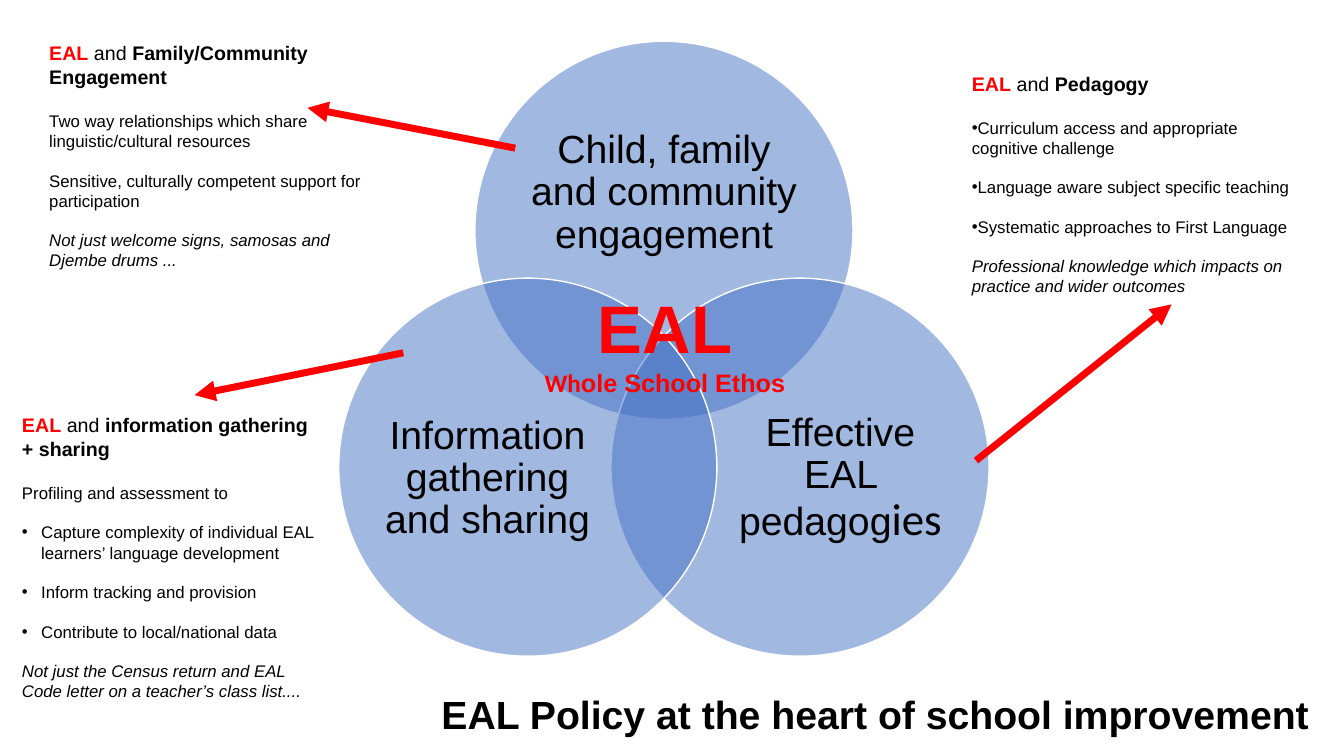
from lxml import etree
from pptx import Presentation
from pptx.dml.color import RGBColor
from pptx.enum.shapes import MSO_CONNECTOR, MSO_SHAPE
from pptx.enum.text import MSO_ANCHOR, PP_ALIGN
from pptx.oxml.ns import qn
from pptx.util import Emu, Pt

OVAL = MSO_SHAPE.OVAL
STRAIGHT = MSO_CONNECTOR.STRAIGHT
MIDDLE = MSO_ANCHOR.MIDDLE
LEFT, CENTER = PP_ALIGN.LEFT, PP_ALIGN.CENTER

BLUE = RGBColor(0x44, 0x72, 0xC4)
RED = RGBColor(0xFF, 0x00, 0x00)
BLACK = RGBColor(0x00, 0x00, 0x00)
WHITE = RGBColor(0xFF, 0xFF, 0xFF)

EMU_PER_PX = 9144
CIRCLE_SIZE = 375
BULLET_INDENT = 19
HEADING_GAP = 16
BODY_GAP = 13.8

CIRCLES = [
    ((471, 41), (521, 107, 275, 169),
     [("Child, family and community engagement", 28, "Arial")]),
    ((606, 276), (721, 372, 225, 206),
     [("Effective EAL pedagog", 28, "Arial"), ("ies", 32, "Calibri")]),
    ((336, 276), (371, 372, 225, 206),
     [("Information gathering and sharing", 28, "Arial")]),
]

NOTES = [
    ((12, 405, 320, 303), "information gathering + sharing", BULLET_INDENT,
     ["Profiling and assessment to"],
     ["Capture complexity of individual EAL learners’ language development",
      "Inform tracking and provision",
      "Contribute to local/national data"],
     "Not just the Census return and EAL Code letter on a teacher’s class list...."),
    ((954, 66, 339, 239), "Pedagogy", 0,
     [],
     ["Curriculum access and appropriate cognitive challenge",
      "Language aware subject specific teaching",
      "Systematic approaches to First Language"],
     "Professional knowledge which impacts on practice and wider outcomes"),
    ((39, 36, 330, 242), "Family/Community Engagement", 0,
     ["Two way relationships which share linguistic/cultural resources",
      "Sensitive, culturally competent support for participation"],
     [],
     "Not just welcome signs, samosas and Djembe drums ..."),
]

ARROWS = [(968, 457, 1162, 302), (400, 350, 193, 392), (511, 147, 305, 107)]


def px(length):
    """Turn whole pixels into EMU."""
    return Emu(length * EMU_PER_PX)


def add_run(para, text, size, name="Arial", color=BLACK, bold=False, italic=False):
    """Append one formatted run to a paragraph."""
    span = para.add_run()
    span.text = text
    font = span.font
    font.size, font.name = Pt(size), name
    font.bold, font.italic = bold, italic
    font.color.rgb = color


def add_box(page, bounds, wrap=True):
    """Add a text box and return it."""
    box = page.shapes.add_textbox(*map(px, bounds))
    box.text_frame.word_wrap = wrap
    return box


def add_paragraph(frame, gap):
    """Append a paragraph with a gap in points above it."""
    para = frame.add_paragraph()
    para.alignment = LEFT
    para.space_before = Pt(gap)
    return para


def add_bullet(para, indent):
    """Give a paragraph a round bullet with a hanging indent."""
    properties = para._p.get_or_add_pPr()
    properties.set("marL", str(px(indent)))
    properties.set("indent", str(-px(indent)))
    etree.SubElement(properties, qn("a:buFont")).set("typeface", "Arial")
    etree.SubElement(properties, qn("a:buChar")).set("char", "•")


def add_circle(page, corner, label_bounds, spans):
    """Add a translucent circle and its centred label."""
    circle = page.shapes.add_shape(
        OVAL, *map(px, corner), px(CIRCLE_SIZE), px(CIRCLE_SIZE))
    circle.shadow.inherit = False
    circle.fill.solid()
    circle.fill.fore_color.rgb = BLUE
    color = circle._element.spPr.find(qn("a:solidFill")).find(qn("a:srgbClr"))
    etree.SubElement(color, qn("a:alpha")).set("val", "50000")
    circle.line.color.rgb = WHITE
    circle.line.width = Pt(1)

    frame = add_box(page, label_bounds).text_frame
    frame.margin_left = frame.margin_right = 0
    frame.margin_top = frame.margin_bottom = 0
    frame.vertical_anchor = MIDDLE
    para = frame.paragraphs[0]
    para.alignment = CENTER
    para.line_spacing = 0.9
    for text, size, name in spans:
        add_run(para, text, size, name)


def add_note(page, bounds, topic, indent, statements, bullets, remark):
    """Add a white note with heading, statements, bullets and closing remark."""
    box = add_box(page, bounds)
    box.fill.solid()
    box.fill.fore_color.rgb = WHITE
    frame = box.text_frame
    heading = frame.paragraphs[0]
    add_run(heading, "EAL", 14, color=RED, bold=True)
    add_run(heading, " and ", 14)
    add_run(heading, topic, 14, bold=True)
    gap = HEADING_GAP
    for index, text in enumerate(statements + bullets):
        para = add_paragraph(frame, gap)
        if index >= len(statements):
            add_bullet(para, indent)
        add_run(para, text, 12)
        gap = BODY_GAP
    add_run(add_paragraph(frame, gap), remark, 12, italic=True)


def add_arrow(page, start_x, start_y, end_x, end_y):
    """Add a thick red arrow."""
    arrow = page.shapes.add_connector(
        STRAIGHT, px(start_x), px(start_y), px(end_x), px(end_y))
    arrow.line.color.rgb = RED
    arrow.line.width = Pt(5)
    etree.SubElement(arrow.line._get_or_add_ln(), qn("a:tailEnd")).set("type", "triangle")
    etree.SubElement(arrow._element.spPr, qn("a:effectLst"))


def add_core(page):
    """Add the red text where the circles meet."""
    frame = add_box(page, (529, 279, 261, 202), wrap=False).text_frame
    core = frame.paragraphs[0]
    add_run(core, "EAL", 48, color=RED, bold=True)
    ethos = frame.add_paragraph()
    add_run(ethos, "Wh", 18, "Calibri", RED, bold=True)
    add_run(ethos, "ole School Ethos", 18, color=RED, bold=True)
    core.alignment = ethos.alignment = CENTER


def main():
    """Build and save the slide."""
    deck = Presentation()
    deck.slide_width, deck.slide_height = px(1333), px(750)
    page = deck.slides.add_slide(deck.slide_layouts[6])
    for circle in CIRCLES:
        add_circle(page, *circle)
    add_core(page)
    for note in NOTES:
        add_note(page, *note)
    for arrow in ARROWS:
        add_arrow(page, *arrow)
    title = add_box(page, (428, 680, 891, 57), wrap=False).text_frame.paragraphs[0]
    add_run(title, "EAL Policy at the heart of school improvement", 28, bold=True)
    deck.save("out.pptx")


if __name__ == "__main__":
    main()
